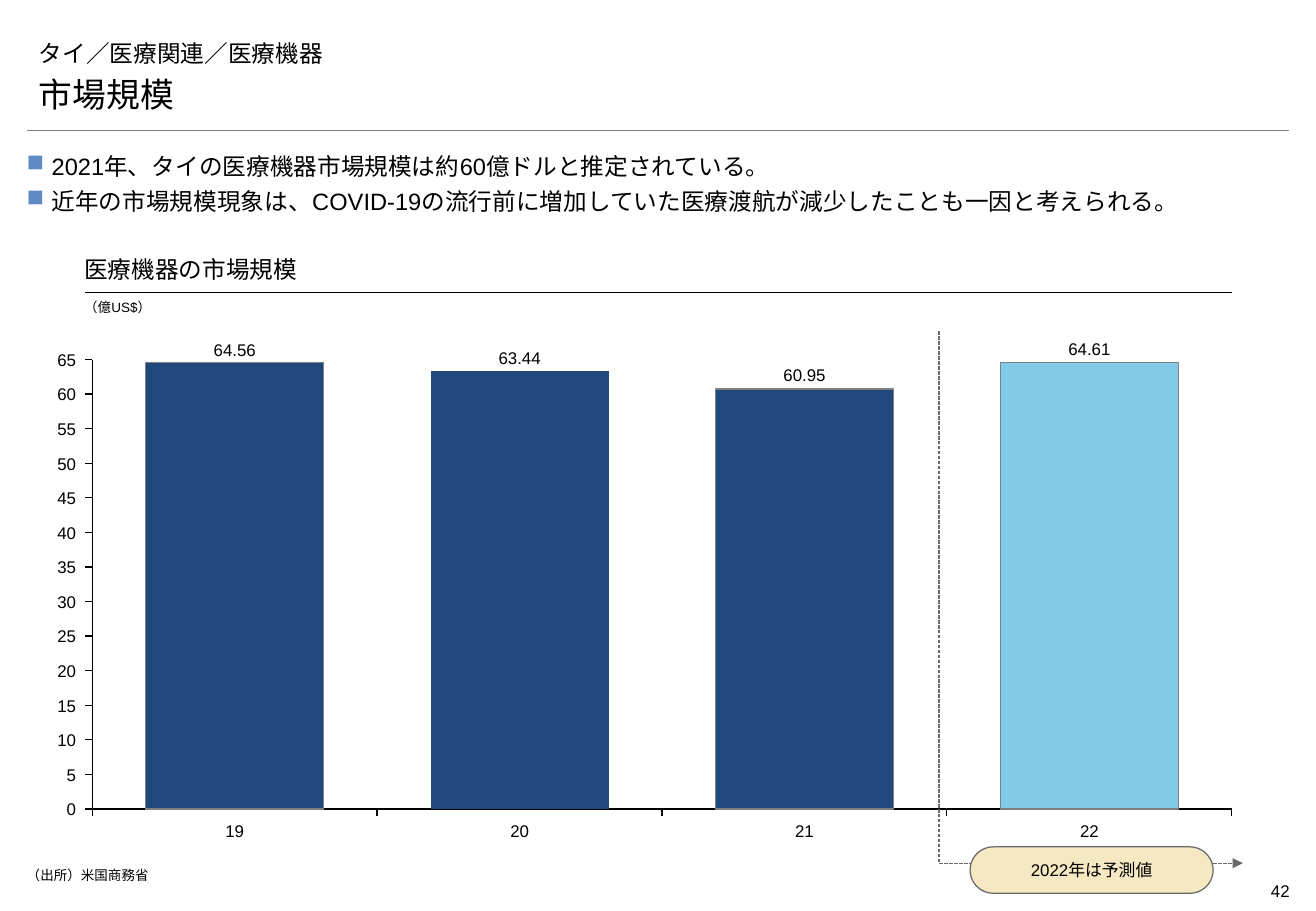
"""Build the slide on the size of the medical device market in Thailand."""
from lxml.etree import SubElement
from pptx import Presentation
from pptx.chart.data import CategoryChartData
from pptx.dml.color import RGBColor
from pptx.enum.chart import XL_CHART_TYPE, XL_TICK_LABEL_POSITION, XL_TICK_MARK
from pptx.enum.dml import MSO_LINE
from pptx.enum.shapes import MSO_CONNECTOR, MSO_SHAPE
from pptx.enum.text import MSO_ANCHOR, MSO_AUTO_SIZE, PP_ALIGN
from pptx.oxml.ns import qn
from pptx.util import Cm, Pt

BLACK, BAR, FORECAST, BAR_EDGE = "000000", "1F497D", "80CCE8", "808080"
RULE, CALLOUT, CALLOUT_EDGE, BULLET = "7F7F7F", "F6E8C2", "6A6A6A", "5F8AC3"
LEFT, CENTER, RIGHT = PP_ALIGN.LEFT, PP_ALIGN.CENTER, PP_ALIGN.RIGHT
TOP, MIDDLE, BOTTOM = MSO_ANCHOR.TOP, MSO_ANCHOR.MIDDLE, MSO_ANCHOR.BOTTOM

# text, box, size, font, alignment, anchor, insets, grow
TEXTS = [
    ("タイ／医療関連／医療機器", (0.56, 0.68, 26.39, 0.86), 14, "Montserrat", LEFT, BOTTOM, (0.25, 0.13, 0.25, 0.13), True),
    ("市場規模", (0.56, 1.4, 26.42, 1.12), 20, "Montserrat", LEFT, BOTTOM, (0.25, 0.13, 0.25, 0.13), True),
    ("医療機器の市場規模", (1.76, 5.33, 24, 0.79), 14, "Montserrat", LEFT, BOTTOM, (0, 0.13, 0, 0.2), False),
    ("（億US$）", (1.76, 6.12, 2.31, 0.61), 8, "Arial", LEFT, MIDDLE, (0, 0, 0, 0), False),
    ("（出所）米国商務省", (0.56, 18.14, 22.81, 0.41), 8, "Arial", LEFT, TOP, (0, 0, 0, 0), False),
    ("42", (24.95, 18.29, 2.01, 0.69), 10, "Arial", RIGHT, TOP, (0, 0.13, 0, 0.13), False),
]
BULLETS = [
    "2021年、タイの医療機器市場規模は約60億ドルと推定されている。",
    "近年の市場規模現象は、COVID-19の流行前に増加していた医療渡航が減少したことも一因と考えられる。",
]
BULLET_BOX = (0.56, 3.12, 26.39, 1.35)
LINES = [((0.56, 2.72), (26.95, 2.72), RULE, 0.25), ((1.78, 6.12), (25.76, 6.12), BLACK, 0.75)]
MARKET = {"19": 64.56, "20": 63.44, "21": 60.95, "22": 64.61}
PEAK = max(MARKET.values())
SCALE_TOP, SCALE_STEP = 65, 5
POINT_STYLES = [(BAR, BAR_EDGE), (BAR, None), (BAR, BAR_EDGE), (FORECAST, BAR_EDGE)]
CHART_BOX = (1.7, 7.29, 24.28, 9.86)
PLOT_BOX = (1.93, 7.52, 23.82, 9.4)
LABEL_HEIGHT, TICK_LABEL_RIGHT, CATEGORY_TOP, VALUE_GAP = 0.43, 1.59, 17.17, 0.06
FORECAST_PATH = [(19.63, 6.93), (19.63, 18.05), (25.98, 18.05)]
CALLOUT_BOX = (20.28, 17.71, 5.08, 0.97)


def color(value):
    """Turn a hex string into a colour."""
    return RGBColor.from_string(value)


def lengths(values):
    """Turn centimetre values into lengths."""
    return [Cm(value) for value in values]


def style_line(line, value, width):
    """Set the colour and width of a line."""
    line.color.rgb = color(value)
    line.width = Pt(width)


def style_font(font, size, name="Arial"):
    """Set size, typeface and black colour of a font."""
    font.size = Pt(size)
    font.name = name
    font.color.rgb = color(BLACK)


def write(paragraph, text, size, name="Arial", alignment=LEFT):
    """Add one styled run to a paragraph."""
    paragraph.alignment = alignment
    run = paragraph.add_run()
    run.text = text
    style_font(run.font, size, name)


def add_box(slide, box, anchor=TOP, insets=(0, 0, 0, 0), grow=False):
    """Add a wrapping text box and return its text frame."""
    frame = slide.shapes.add_textbox(*lengths(box)).text_frame
    frame.word_wrap = True
    frame.auto_size = MSO_AUTO_SIZE.SHAPE_TO_FIT_TEXT if grow else MSO_AUTO_SIZE.NONE
    frame.vertical_anchor = anchor
    frame.margin_left, frame.margin_top, frame.margin_right, frame.margin_bottom = lengths(insets)
    return frame


def add_label(slide, text, left, top, width, alignment, anchor):
    """Add a one-line chart label."""
    frame = add_box(slide, (left, top, width, LABEL_HEIGHT), anchor)
    write(frame.paragraphs[0], text, 10, alignment=alignment)


def add_bullets(slide):
    """Add the bulleted statements."""
    frame = add_box(slide, BULLET_BOX, grow=True)
    for index, text in enumerate(BULLETS):
        paragraph = frame.add_paragraph() if index else frame.paragraphs[0]
        paragraph.line_spacing = 1.1
        paragraph.space_after = Pt(2)
        properties = paragraph._p.get_or_add_pPr()
        properties.set("marL", str(Cm(0.52)))
        properties.set("indent", str(-Cm(0.52)))
        SubElement(SubElement(properties, qn("a:buClr")), qn("a:srgbClr"), val=BULLET)
        SubElement(properties, qn("a:buFont"), typeface="Wingdings", charset="2")
        SubElement(properties, qn("a:buChar"), char="n")
        write(paragraph, text, 14, alignment=PP_ALIGN.JUSTIFY)


def add_rule(slide, start, end, value, width):
    """Add a straight line without shadow."""
    rule = slide.shapes.add_connector(MSO_CONNECTOR.STRAIGHT, *lengths(start + end))
    style_line(rule.line, value, width)
    SubElement(rule._element.spPr, qn("a:effectLst"))


def fix_plot_area(chart):
    """Pin the inner plot area to its place within the chart."""
    plot_area = chart._chartSpace.chart.plotArea
    for old in plot_area.findall(qn("c:layout")):
        plot_area.remove(old)
    layout = SubElement(plot_area, qn("c:layout"))
    plot_area.insert(0, layout)
    manual = SubElement(layout, qn("c:manualLayout"))
    left, top, width, height = CHART_BOX
    x, y, plot_width, plot_height = PLOT_BOX
    settings = [("layoutTarget", "inner"), ("xMode", "edge"), ("yMode", "edge"),
                ("x", (x - left) / width), ("y", (y - top) / height),
                ("w", plot_width / width), ("h", plot_height / height)]
    for tag, value in settings:
        SubElement(manual, qn(f"c:{tag}"), val=str(value))


def add_market_chart(slide):
    """Add the columns, indexed to the peak year."""
    data = CategoryChartData()
    data.categories = [str(number + 1) for number in range(len(MARKET))]
    data.add_series("Series 1", [round(value / PEAK * 100) for value in MARKET.values()])
    chart = slide.shapes.add_chart(XL_CHART_TYPE.COLUMN_STACKED, *lengths(CHART_BOX), data).chart
    chart.has_legend = chart.has_title = False
    style_font(chart.font, 10)
    for axis in (chart.category_axis, chart.value_axis):
        axis.has_major_gridlines = False
        axis.major_tick_mark = XL_TICK_MARK.OUTSIDE
        axis.minor_tick_mark = XL_TICK_MARK.NONE
        axis.tick_label_position = XL_TICK_LABEL_POSITION.NONE
        style_line(axis.format.line, BLACK, 0.75)
    axis.minimum_scale = 0
    axis.maximum_scale = SCALE_TOP / PEAK * 100
    axis.major_unit = SCALE_STEP / PEAK * 100
    plot = chart.plots[0]
    plot.vary_by_categories = False
    plot.gap_width, plot.overlap = 60, 100
    series = plot.series[0]
    series.format.fill.solid()
    series.format.fill.fore_color.rgb = color(BAR)
    style_line(series.format.line, BAR_EDGE, 0.75)
    for index, (fill, edge) in enumerate(POINT_STYLES):
        point = series.points[index].format
        point.fill.solid()
        point.fill.fore_color.rgb = color(fill)
        if edge:
            style_line(point.line, edge, 0.75)
        else:
            point.line.fill.background()
    fix_plot_area(chart)


def add_chart_labels(slide):
    """Add scale, year and value labels around the columns."""
    left, top, width, height = PLOT_BOX
    for value in range(0, SCALE_TOP + 1, SCALE_STEP):
        center = top + height * (1 - value / SCALE_TOP)
        label_width = 0.2 * len(str(value))
        add_label(slide, str(value), TICK_LABEL_RIGHT - label_width, center - LABEL_HEIGHT / 2,
                  label_width, RIGHT, MIDDLE)
    for index, (year, value) in enumerate(MARKET.items()):
        center = left + width / len(MARKET) * (index + 0.5)
        bar_top = top + height * (1 - value / SCALE_TOP)
        add_label(slide, year, center - 0.22, CATEGORY_TOP, 0.44, CENTER, TOP)
        add_label(slide, f"{value:.2f}", center - 0.48, bar_top - VALUE_GAP - LABEL_HEIGHT, 0.96, CENTER, BOTTOM)


def add_forecast_marker(slide):
    """Add the dashed forecast arrow and its callout."""
    start, *corners = [tuple(lengths(point)) for point in FORECAST_PATH]
    builder = slide.shapes.build_freeform(*start)
    builder.add_line_segments(corners, close=False)
    arrow = builder.convert_to_shape()
    arrow.shadow.inherit = False
    arrow.fill.background()
    style_line(arrow.line, CALLOUT_EDGE, 0.75)
    arrow.line.dash_style = MSO_LINE.SQUARE_DOT
    SubElement(arrow.line._get_or_add_ln(), qn("a:tailEnd"), type="triangle")

    callout = slide.shapes.add_shape(MSO_SHAPE.ROUNDED_RECTANGLE, *lengths(CALLOUT_BOX))
    callout.adjustments[0] = 0.5
    callout.shadow.inherit = False
    callout.fill.solid()
    callout.fill.fore_color.rgb = color(CALLOUT)
    style_line(callout.line, CALLOUT_EDGE, 0.75)
    callout.text_frame.vertical_anchor = MIDDLE
    write(callout.text_frame.paragraphs[0], "2022年は予測値", 10, alignment=CENTER)


def main():
    """Assemble and save the slide."""
    presentation = Presentation()
    presentation.slide_width, presentation.slide_height = Cm(27.51), Cm(19.05)
    slide = presentation.slides.add_slide(presentation.slide_layouts[6])
    for rule in LINES:
        add_rule(slide, *rule)
    for text, box, size, name, alignment, anchor, insets, grow in TEXTS:
        frame = add_box(slide, box, anchor, insets, grow)
        write(frame.paragraphs[0], text, size, name, alignment)
    add_market_chart(slide)
    add_chart_labels(slide)
    add_forecast_marker(slide)
    add_bullets(slide)
    presentation.save("out.pptx")


if __name__ == "__main__":
    main()
